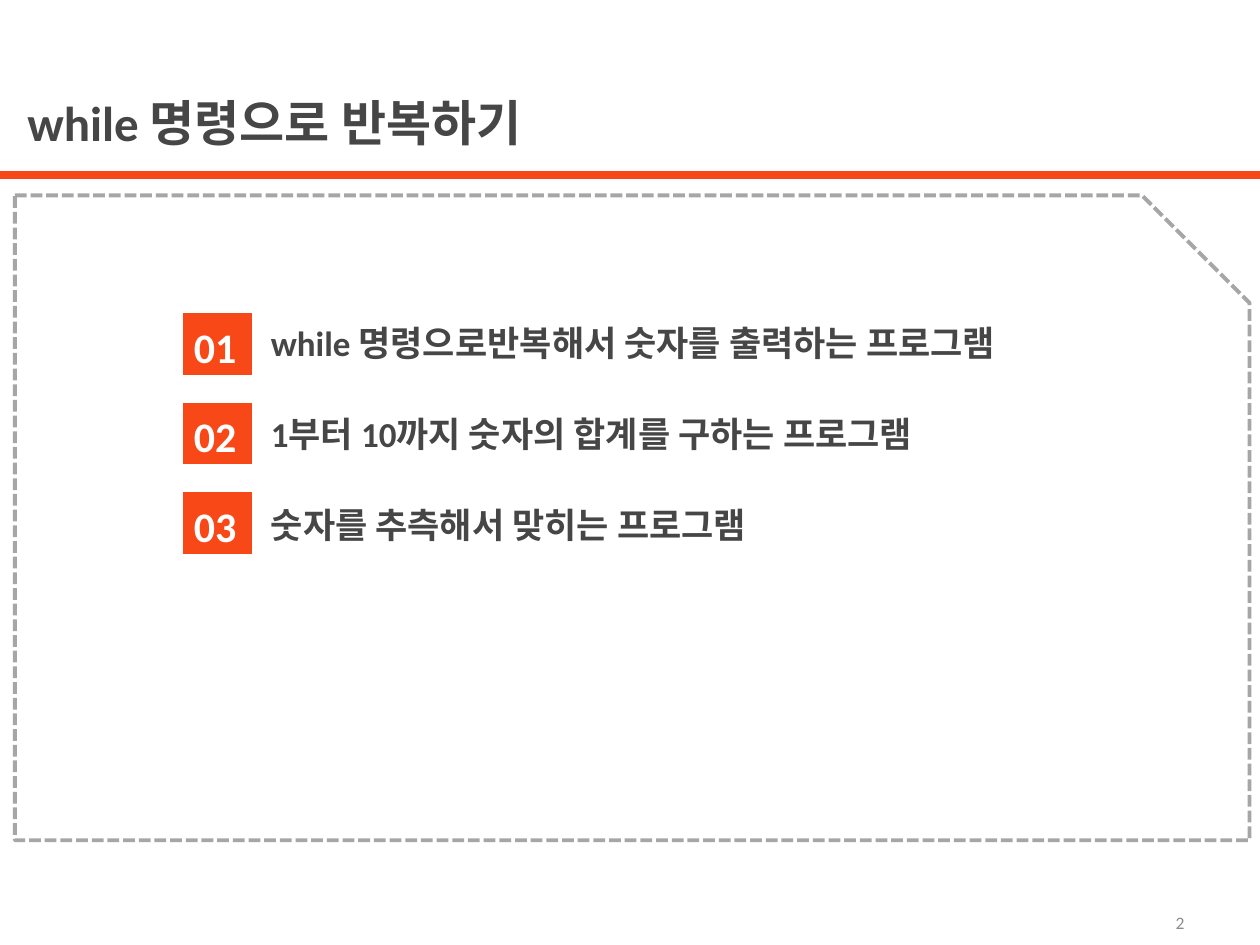
from dataclasses import dataclass

from lxml.etree import SubElement
from pptx import Presentation
from pptx.dml.color import RGBColor as RGB
from pptx.enum.dml import MSO_LINE as Dash
from pptx.enum.shapes import MSO_CONNECTOR as Link, MSO_SHAPE as Shape
from pptx.enum.text import MSO_ANCHOR as Anchor, MSO_AUTO_SIZE as Auto, PP_ALIGN as Align
from pptx.oxml.ns import qn
from pptx.util import Cm, Pt


@dataclass(frozen=True)
class Theme:
    font: str = "Calibri"
    ink: str = "464646"
    accent: str = "F84818"
    frame: str = "A6A6A6"
    muted: str = "8D8D8D"
    white: str = "FFFFFF"
    title: int = 28
    badge: int = 24
    body: int = 20
    page: int = 10


THEME = Theme()
TOPICS = [
    "while 명령으로반복해서 숫자를 출력하는 프로그램",
    "1부터 10까지 숫자의 합계를 구하는 프로그램",
    "숫자를 추측해서 맞히는 프로그램",
]


def color(code):
    return RGB.from_string(code)


def put(shape, *lines, size, ink=THEME.ink, bold=True, align=Align.LEFT,
        anchor=Anchor.TOP, space=1.0, gap=0):
    """Fill a shape with one formatted paragraph per line."""
    frame = shape.text_frame
    frame.word_wrap = True
    frame.auto_size = Auto.NONE
    frame.vertical_anchor = anchor
    for i, line in enumerate(lines):
        para = frame.add_paragraph() if i else frame.paragraphs[0]
        para.alignment = align
        para.line_spacing = space
        para.space_before = Pt(gap if i else 0)
        run = para.add_run()
        run.text = line
        font = run.font
        font.name, font.size, font.bold = THEME.font, Pt(size), bold
        font.color.rgb = color(ink)


def box(shapes, x, y, w, h):
    return shapes.add_textbox(Cm(x), Cm(y), Cm(w), Cm(h))


def head(slide, text):
    title = slide.shapes.title
    title.left, title.top = Cm(0.3), Cm(1.73)
    title.width, title.height = Cm(24), Cm(1.45)
    put(title, text, size=THEME.title)


def rule(shapes, y, width):
    line = shapes.add_connector(Link.STRAIGHT, 0, Cm(y), width, Cm(y))
    line.line.color.rgb = color(THEME.accent)
    line.line.width = Pt(4.5)
    SubElement(line._element.spPr, qn("a:effectLst"))


def border(shapes):
    shape = shapes.add_shape(Shape.SNIP_1_RECTANGLE,
                             Cm(0.3), Cm(3.94), Cm(24.89), Cm(13))
    shape.shadow.inherit = False
    shape.fill.background()
    shape.line.color.rgb = color(THEME.frame)
    shape.line.width = Pt(2.25)
    shape.line.dash_style = Dash.SQUARE_DOT


def badge(shapes, num, y):
    group = shapes.add_group_shape().shapes
    tile = group.add_shape(Shape.FLOWCHART_PROCESS,
                           Cm(3.68), Cm(y), Cm(1.4), Cm(1.24))
    tile.shadow.inherit = False
    tile.fill.solid()
    tile.fill.fore_color.rgb = color(THEME.accent)
    tile.line.fill.background()
    put(box(group, 3.4, y + 0.04, 1.88, 1.24), f"{num:02}",
        size=THEME.badge, ink=THEME.white, align=Align.CENTER)


def main():
    deck = Presentation()
    deck.slide_width, deck.slide_height = Cm(25.4), Cm(19.05)
    slide = deck.slides.add_slide(deck.slide_layouts[5])
    shapes = slide.shapes

    # Heading and frame
    head(slide, "while 명령으로 반복하기")
    rule(shapes, 3.53, deck.slide_width)
    border(shapes)

    # Numbered topics
    put(box(shapes, 5.21, 6.27, 17.7, 4.95), *TOPICS,
        size=THEME.body, space=1.1, gap=25.5)
    for i in range(len(TOPICS)):
        badge(shapes, i + 1, 6.32 + 1.8 * i)

    # Page number
    put(box(shapes, 18.21, 18.19, 5.92, 0.81), "2", size=THEME.page,
        ink=THEME.muted, bold=False, align=Align.RIGHT, anchor=Anchor.MIDDLE)

    deck.save("out.pptx")


if __name__ == "__main__":
    main()
